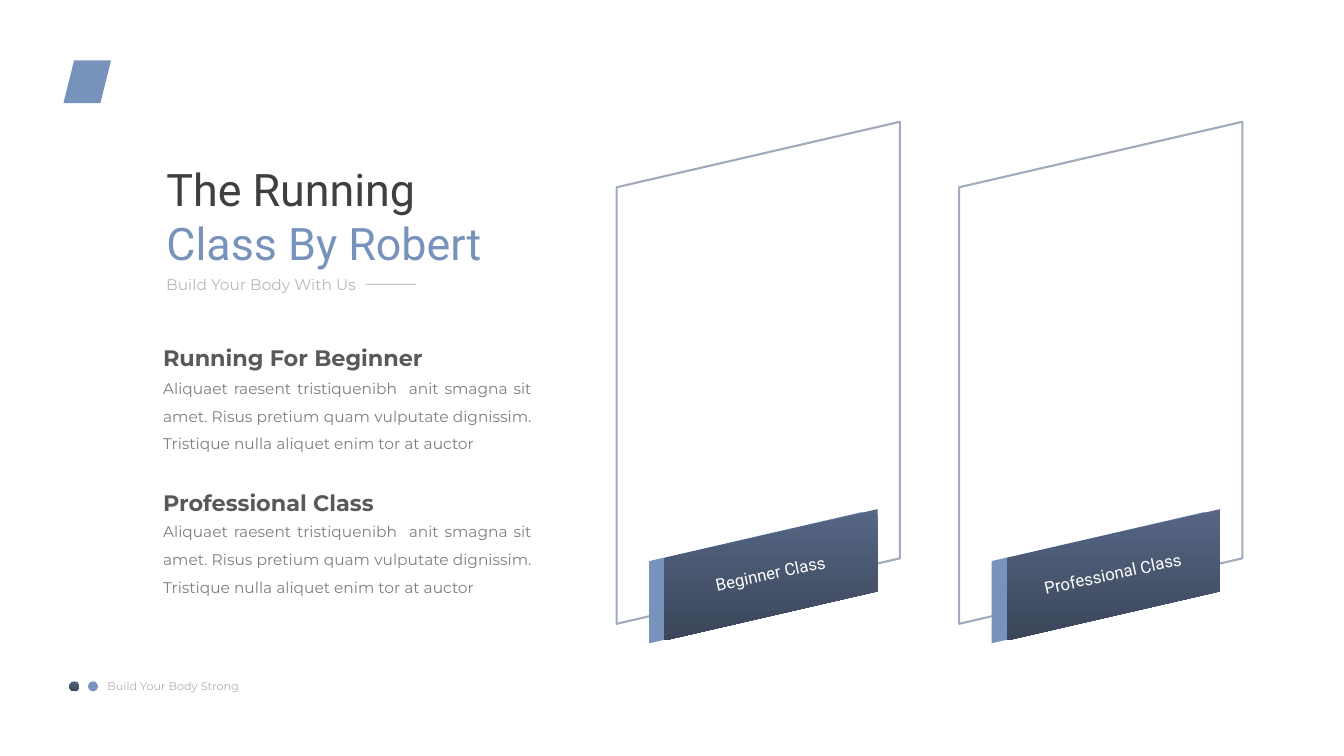
from lxml import etree
from pptx import Presentation
from pptx.dml.color import RGBColor
from pptx.enum.shapes import MSO_CONNECTOR, MSO_SHAPE
from pptx.enum.text import MSO_ANCHOR, MSO_AUTO_SIZE, PP_ALIGN
from pptx.oxml.ns import qn
from pptx.util import Cm, Pt

STRAIGHT = MSO_CONNECTOR.STRAIGHT
OVAL, PARALLELOGRAM = MSO_SHAPE.OVAL, MSO_SHAPE.PARALLELOGRAM
TOP = MSO_ANCHOR.TOP
FIT_SHAPE = MSO_AUTO_SIZE.SHAPE_TO_FIT_TEXT
LEFT, CENTER, JUSTIFY = PP_ALIGN.LEFT, PP_ALIGN.CENTER, PP_ALIGN.JUSTIFY

SLATE = RGBColor(0x56, 0x66, 0x84)
NAVY = RGBColor(0x3A, 0x45, 0x58)
BLUE = RGBColor(0x77, 0x93, 0xBB)
CHARCOAL = RGBColor(0x3F, 0x3F, 0x3F)
DARK_GRAY = RGBColor(0x59, 0x59, 0x59)
GRAY = RGBColor(0x7F, 0x7F, 0x7F)
LIGHT_GRAY = RGBColor(0xB2, 0xB2, 0xB2)
WHITE = RGBColor(0xFF, 0xFF, 0xFF)

BODY = ("Aliquaet raesent tristiquenibh  anit smagna sit amet. Risus pretium quam "
        "vulputate dignissim. Tristique nulla aliquet enim tor at auctor")


def paint(shape, colors):
    shape.shadow.inherit = False
    shape.line.fill.background()
    if len(colors) == 2:
        shape.fill.gradient()
        shape.fill.gradient_angle = 270
        for stop, color in zip(shape.fill.gradient_stops, colors):
            stop.color.rgb = color
    elif colors:
        shape.fill.solid()
        shape.fill.fore_color.rgb = colors[0]
    else:
        shape.fill.background()


def write(box, spans, font, size, align=LEFT, spacing=1.0, bold=False, wrap=True):
    frame = box.text_frame
    frame.word_wrap = wrap
    frame.auto_size = FIT_SHAPE
    frame.vertical_anchor = TOP
    para = frame.paragraphs[0]
    para.alignment = align
    para.line_spacing = spacing
    for text, color in spans:
        span = para.add_run()
        span.text = text
        span.font.name = font
        span.font.size = Pt(size)
        span.font.bold = bold
        span.font.color.rgb = color
    return box


deck = Presentation()
deck.slide_width, deck.slide_height = Cm(33.87), Cm(19.05)
page = deck.slides.add_slide(deck.slide_layouts[5])
shapes = page.shapes
faded = []

panels = [
    (15.54, 3.07, 7.14, 11, 1.65, ()),
    (16.36, 12.9, 5.38, 2.07, 1.24, (BLUE,)),
    (16.74, 12.83, 5.38, 2.07, 1.24, (SLATE, NAVY)),
]
for column, label in enumerate(("Beginner Class", "Professional Class")):
    shift = column * 8.63
    for left, top, width, height, rise, colors in panels:
        left += shift
        right = left + width
        corners = [(right, top), (right, top + height),
                   (left, top + rise + height), (left, top + rise)]
        points = [(Cm(x), Cm(y)) for x, y in corners]
        builder = shapes.build_freeform(*points[0])
        builder.add_line_segments(points[1:], close=True)
        panel = builder.convert_to_shape()
        paint(panel, colors)
        if not colors:
            panel.line.color.rgb = SLATE
            panel.line.width = Pt(1.5)
            faded.append(panel)
    box = shapes.add_textbox(Cm(16.76 + shift), Cm(14.07), Cm(5.31), Cm(0.77))
    box.rotation = 347.9
    write(box, [(label, WHITE)], "Roboto", 12, CENTER)

emblem = shapes.add_shape(PARALLELOGRAM, Cm(1.6), Cm(1.52), Cm(1.2), Cm(1.08))
paint(emblem, (BLUE,))
for left, colors in ((1.75, (SLATE, NAVY)), (2.22, (BLUE,))):
    dot = shapes.add_shape(OVAL, Cm(left), Cm(17.17), Cm(0.25), Cm(0.25))
    paint(dot, colors)
box = shapes.add_textbox(Cm(2.46), Cm(16.99), Cm(3.86), Cm(0.6))
write(box, [("Build Your Body Strong", LIGHT_GRAY)], "Montserrat", 8, wrap=False)

title = shapes.title
title.left, title.top, title.width, title.height = Cm(3.94), Cm(3.96), Cm(9.73), Cm(3)
write(title, [("The Running ", CHARCOAL), ("Class By Robert", BLUE)], "Roboto", 32)
tagline = shapes.add_textbox(Cm(3.94), Cm(6.81), Cm(5.36), Cm(0.73))
write(tagline, [("Build Your Body With Us", GRAY)], "Montserrat", 11, wrap=False)
faded.append(tagline)

dash = shapes.add_connector(STRAIGHT, Cm(9.22), Cm(7.16), Cm(10.49), Cm(7.16))
dash.line.color.rgb = SLATE
dash.line.width = Pt(0.5)
etree.SubElement(dash._element.spPr, qn("a:effectLst"))
faded.append(dash)

for shape in faded:
    for color in shape._element.iter(qn("a:srgbClr")):
        etree.SubElement(color, qn("a:alpha")).set("val", "55000")

for heading, heading_top, body_top in (("Running For Beginner", 8.2, 9.19),
                                       ("Professional Class", 11.86, 12.8)):
    box = shapes.add_textbox(Cm(3.86), Cm(heading_top), Cm(7.57), Cm(1.17))
    write(box, [(heading, DARK_GRAY)], "Montserrat", 16, spacing=1.5, bold=True)
    box = shapes.add_textbox(Cm(3.86), Cm(body_top), Cm(9.8), Cm(2.29))
    write(box, [(BODY, GRAY)], "Montserrat", 11, JUSTIFY, 1.5)

deck.save("out.pptx")
